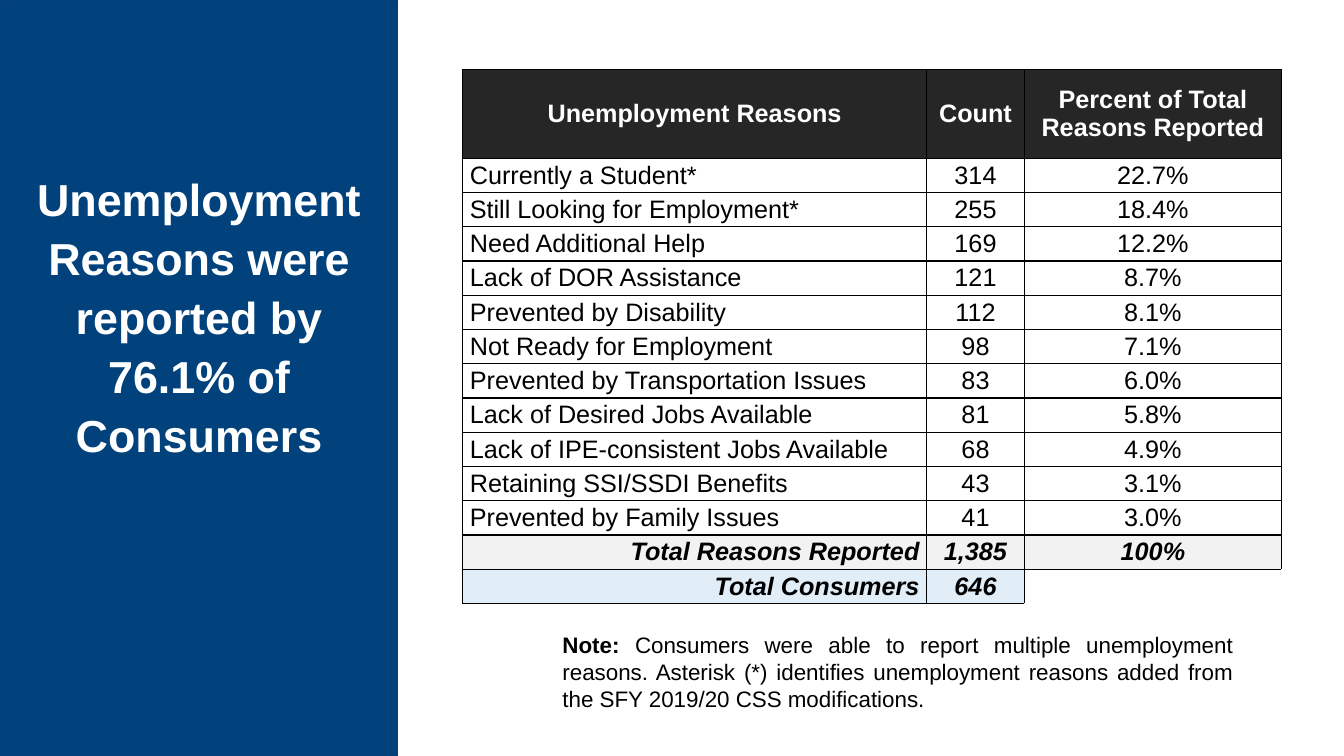
from dataclasses import dataclass

from lxml import etree
from pptx import Presentation
from pptx.dml.color import RGBColor
from pptx.enum.shapes import MSO_SHAPE
from pptx.enum.text import MSO_ANCHOR, PP_ALIGN
from pptx.oxml.ns import qn
from pptx.util import Inches, Pt

RECTANGLE = MSO_SHAPE.RECTANGLE
MIDDLE = MSO_ANCHOR.MIDDLE
LEFT, CENTER, RIGHT, JUSTIFY = PP_ALIGN.LEFT, PP_ALIGN.CENTER, PP_ALIGN.RIGHT, PP_ALIGN.JUSTIFY


@dataclass(frozen=True)
class Theme:
    """Colours, font and type sizes of the slide."""

    font: str = "Arial"
    panel: str = "01417C"
    panel_line: str = "01407A"
    header: str = "262626"
    white: str = "FFFFFF"
    black: str = "000000"
    total: str = "F2F2F2"
    consumers: str = "E1EDF7"
    title_size: int = 32
    title_spacing: int = 42
    table_size: int = 18
    note_size: int = 16


THEME = Theme()
HEADINGS = ("Unemployment Reasons", "Count", "Percent of Total\nReasons Reported")
REASONS = [
    ("Currently a Student*", "314", "22.7%"),
    ("Still Looking for Employment*", "255", "18.4%"),
    ("Need Additional Help", "169", "12.2%"),
    ("Lack of DOR Assistance", "121", "8.7%"),
    ("Prevented by Disability", "112", "8.1%"),
    ("Not Ready for Employment", "98", "7.1%"),
    ("Prevented by Transportation Issues", "83", "6.0%"),
    ("Lack of Desired Jobs Available", "81", "5.8%"),
    ("Lack of IPE-consistent Jobs Available", "68", "4.9%"),
    ("Retaining SSI/SSDI Benefits", "43", "3.1%"),
    ("Prevented by Family Issues", "41", "3.0%"),
]
TOTAL = ("Total Reasons Reported", "1,385", "100%")
CONSUMERS = ("Total Consumers", "646", "")
COLUMN_WIDTHS = (4.6, 0.97, 2.55)
HEADER_HEIGHT, ROW_HEIGHT = 0.88, 0.34


def set_attributes(target, values):
    """Set each named value on the target."""
    for name, value in values.items():
        setattr(target, name, value)


def style_font(font, size, color, **values):
    """Apply the theme font with a size, a colour and further values."""
    set_attributes(font, {"name": THEME.font, "size": Pt(size), **values})
    font.color.rgb = RGBColor.from_string(color)


def add_panel(slide):
    """Add the coloured panel on the left."""
    shape = slide.shapes.add_shape(RECTANGLE, 0, 0, Inches(3.94), Inches(7.5))
    shape.shadow.inherit = False
    shape.fill.solid()
    shape.fill.fore_color.rgb = RGBColor.from_string(THEME.panel)
    shape.line.color.rgb = RGBColor.from_string(THEME.panel_line)
    shape.line.width = Pt(1)


def add_text(slide, box, runs, size, color, **paragraph_values):
    """Add a wrapped text box of (text, bold) runs in one paragraph."""
    shape = slide.shapes.add_textbox(*(Inches(length) for length in box))
    margins = {f"margin_{side}": Inches(0.1) for side in ("left", "top", "right", "bottom")}
    set_attributes(shape.text_frame, {"word_wrap": True, "vertical_anchor": MIDDLE, **margins})
    paragraph = shape.text_frame.paragraphs[0]
    set_attributes(paragraph, paragraph_values)
    for text, bold in runs:
        run = paragraph.add_run()
        run.text = text
        style_font(run.font, size, color, bold=bold)


def set_borders(cell, sides):
    """Draw thin black borders on the given sides of a cell."""
    properties = cell._tc.get_or_add_tcPr()
    for index, side in enumerate(sides):
        line = etree.Element(qn(f"a:ln{side}"), w=str(Pt(1)))
        fill = etree.SubElement(line, qn("a:solidFill"))
        etree.SubElement(fill, qn("a:srgbClr"), val=THEME.black)
        properties.insert(index, line)


def fill_cell(cell, text, fill, alignment, color, **font_values):
    """Write and format one table cell; an empty one stays clear."""
    cell.text = text
    set_attributes(cell, {
        "vertical_anchor": MIDDLE,
        "margin_left": Inches(0.07), "margin_right": Inches(0.07),
        "margin_top": 0, "margin_bottom": 0,
    })
    for paragraph in cell.text_frame.paragraphs:
        paragraph.alignment = alignment
        style_font(paragraph.font, THEME.table_size, color)
        for run in paragraph.runs:
            style_font(run.font, THEME.table_size, color, **font_values)
    if text:
        cell.fill.solid()
        cell.fill.fore_color.rgb = RGBColor.from_string(fill)
    else:
        cell.fill.background()
    set_borders(cell, "LRTB" if text else "LT")


def add_reasons_table(slide):
    """Add the table of reasons with its header and two total rows."""
    emphasis = {"bold": True, "italic": True}
    rows = [(HEADINGS, THEME.header, CENTER, THEME.white, {"bold": True})]
    rows += [(reason, THEME.white, LEFT, THEME.black, {"bold": False}) for reason in REASONS]
    rows += [(TOTAL, THEME.total, RIGHT, THEME.black, emphasis),
             (CONSUMERS, THEME.consumers, RIGHT, THEME.black, emphasis)]
    height = HEADER_HEIGHT + ROW_HEIGHT * (len(rows) - 1)
    table = slide.shapes.add_table(
        len(rows), len(COLUMN_WIDTHS), Inches(4.59), Inches(0.69),
        Inches(sum(COLUMN_WIDTHS)), Inches(height)).table
    set_attributes(table, {"first_row": False, "horz_banding": False})
    for column, width in zip(table.columns, COLUMN_WIDTHS):
        column.width = Inches(width)
    for index, (texts, fill, label_alignment, color, font_values) in enumerate(rows):
        table.rows[index].height = Inches(ROW_HEIGHT if index else HEADER_HEIGHT)
        for position, text in enumerate(texts):
            alignment = CENTER if position else label_alignment
            fill_cell(table.cell(index, position), text, fill, alignment, color, **font_values)


def main():
    """Build the slide and save it."""
    presentation = Presentation()
    set_attributes(presentation, {"slide_width": Inches(13.33), "slide_height": Inches(7.5)})
    slide = presentation.slides.add_slide(presentation.slide_layouts[6])
    add_panel(slide)
    add_text(slide, (0.14, 0.12, 3.67, 5.99),
             [("Unemployment Reasons were reported by 76.1% of Consumers", True)],
             THEME.title_size, THEME.white,
             alignment=CENTER, line_spacing=Pt(THEME.title_spacing))
    add_reasons_table(slide)
    add_text(slide, (5.48, 6.11, 6.85, 1.1),
             [("Note: ", True),
              ("Consumers were able to report multiple unemployment reasons. Asterisk (*) "
               "identifies unemployment reasons added from the SFY 2019/20 CSS modifications.",
               False)],
             THEME.note_size, THEME.black, alignment=JUSTIFY)
    presentation.save("out.pptx")


if __name__ == "__main__":
    main()
